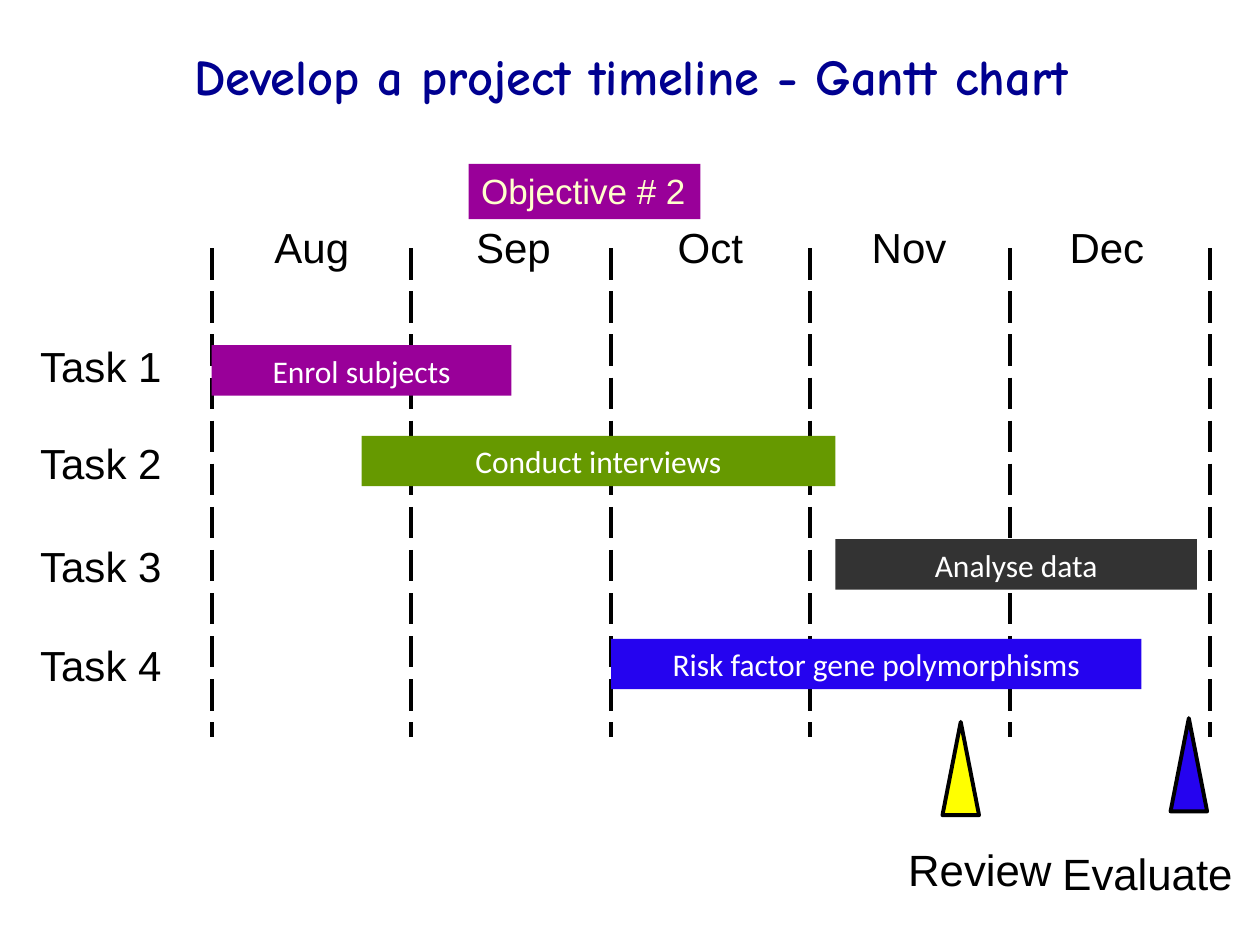
from typing import NamedTuple

import pptx
import pptx.dml.color
import pptx.enum.dml
import pptx.enum.shapes
import pptx.enum.text
import pptx.oxml.ns
import pptx.util
from lxml import etree

Inches = pptx.util.Inches
Pt = pptx.util.Pt
RGBColor = pptx.dml.color.RGBColor
Align = pptx.enum.text.PP_ALIGN
Anchor = pptx.enum.text.MSO_ANCHOR
Preset = pptx.enum.shapes.MSO_SHAPE

NAVY = RGBColor(0x00, 0x00, 0x90)
PURPLE = RGBColor(0x99, 0x00, 0x99)
CREAM = RGBColor(0xFF, 0xFF, 0xCC)
GREEN = RGBColor(0x66, 0x99, 0x00)
CHARCOAL = RGBColor(0x33, 0x33, 0x33)
BLUE = RGBColor(0x25, 0x03, 0xEF)
YELLOW = RGBColor(0xFF, 0xFF, 0x00)
BLACK = RGBColor(0x00, 0x00, 0x00)
WHITE = RGBColor(0xFF, 0xFF, 0xFF)

CHART_LEFT, CHART_RIGHT = 1.68, 9.6
CHART_TOP, CHART_BOTTOM = 1.97, 5.85
BAR_HEIGHT = 0.4
RULE_WIDTH = 2.25


class Month(NamedTuple):
    name: str
    left: float
    width: float


class Task(NamedTuple):
    label: str
    label_top: float
    activity: str
    start: float
    top: float
    length: float
    color: RGBColor


class Milestone(NamedTuple):
    name: str
    left: float
    top: float
    color: RGBColor
    name_left: float
    name_top: float
    name_width: float
    align: Align


MONTHS = [
    Month("Aug", 2.08, 0.81),
    Month("Sep", 3.68, 0.82),
    Month("Oct", 5.28, 0.73),
    Month("Nov", 6.82, 0.8),
    Month("Dec", 8.39, 0.83),
]
TASKS = [
    Task("Task 1", 2.65, "Enrol subjects", 1.68, 2.74, 2.38, PURPLE),
    Task("Task 2", 3.42, "Conduct interviews", 2.87, 3.46, 3.76, GREEN),
    Task("Task 3", 4.24, "Analyse data", 6.63, 4.28, 2.87, CHARCOAL),
    Task("Task 4", 5.03, "Risk factor gene polymorphisms", 4.85, 5.07, 4.21, BLUE),
]
MILESTONES = [
    Milestone("Review", 7.48, 5.73, YELLOW, 7.11, 6.64, 1.38, Align.LEFT),
    Milestone("Evaluate", 9.29, 5.7, BLUE, 8.31, 6.67, 1.57, Align.RIGHT),
]


def write(shape, text: str, *, size: float = 24, font: str = "Arial",
          color: RGBColor = BLACK, bold: bool = False, align: Align = Align.LEFT,
          anchor: Anchor = Anchor.TOP, wrap: bool = False) -> None:
    frame = shape.text_frame
    frame.word_wrap = wrap
    frame.vertical_anchor = anchor
    paragraph = frame.paragraphs[0]
    paragraph.alignment = align
    run = paragraph.add_run()
    run.text = text
    run.font.name = font
    run.font.size = Pt(size)
    run.font.bold = bold
    run.font.color.rgb = color


def add_label(slide, text: str, left: float, top: float, width: float,
              height: float = 0.51, **text_format) -> None:
    box = slide.shapes.add_textbox(
        Inches(left), Inches(top), Inches(width), Inches(height))
    write(box, text, **text_format)


def add_filled(slide, preset: Preset, left: float, top: float, width: float,
               height: float, fill: RGBColor, outline: RGBColor | None = None):
    shape = slide.shapes.add_shape(
        preset, Inches(left), Inches(top), Inches(width), Inches(height))
    shape.shadow.inherit = False
    shape.fill.solid()
    shape.fill.fore_color.rgb = fill
    if outline is None:
        shape.line.fill.background()
    else:
        shape.line.color.rgb = outline
        shape.line.width = Pt(RULE_WIDTH)
    return shape


def add_month_rule(slide, x: float) -> None:
    rule = slide.shapes.add_connector(
        pptx.enum.shapes.MSO_CONNECTOR.STRAIGHT,
        Inches(x), Inches(CHART_TOP), Inches(x), Inches(CHART_BOTTOM))
    rule.line.color.rgb = BLACK
    rule.line.width = Pt(RULE_WIDTH)
    rule.line.dash_style = pptx.enum.dml.MSO_LINE.LONG_DASH
    etree.SubElement(rule._element.spPr, pptx.oxml.ns.qn("a:effectLst"))


def add_task(slide, task: Task) -> None:
    add_label(slide, task.label, 0.22, task.label_top, 1.31, wrap=True)
    bar = add_filled(slide, Preset.RECTANGLE, task.start, task.top,
                     task.length, BAR_HEIGHT, task.color)
    write(bar, task.activity, size=18, font="Calibri", color=WHITE,
          align=Align.CENTER, anchor=Anchor.MIDDLE, wrap=True)


def add_milestone(slide, milestone: Milestone) -> None:
    add_filled(slide, Preset.ISOSCELES_TRIANGLE, milestone.left, milestone.top,
               0.29, 0.74, milestone.color, outline=BLACK)
    add_label(slide, milestone.name, milestone.name_left, milestone.name_top,
              milestone.name_width, 0.52, size=25, align=milestone.align)


def main() -> None:
    deck = pptx.Presentation()
    deck.slide_width, deck.slide_height = Inches(10), Inches(7.5)
    slide = deck.slides.add_slide(deck.slide_layouts[5])

    title = slide.shapes.title
    title.left, title.top = Inches(0.51), Inches(0.16)
    title.width, title.height = Inches(9), Inches(0.87)
    write(title, "Develop a project timeline - Gantt chart", size=28.8,
          font="Comic Neue", color=NAVY, bold=True, align=Align.CENTER,
          anchor=Anchor.MIDDLE, wrap=True)

    objective = add_filled(slide, Preset.RECTANGLE, 3.72, 1.3, 1.84, 0.44, PURPLE)
    write(objective, "Objective # 2", size=20, color=CREAM)

    for month in MONTHS:
        add_label(slide, month.name, month.left, 1.71, month.width)
    month_width = (CHART_RIGHT - CHART_LEFT) / len(MONTHS)
    for boundary in range(len(MONTHS) + 1):
        add_month_rule(slide, CHART_LEFT + boundary * month_width)
    for task in TASKS:
        add_task(slide, task)
    for milestone in MILESTONES:
        add_milestone(slide, milestone)

    deck.save("out.pptx")


if __name__ == "__main__":
    main()
